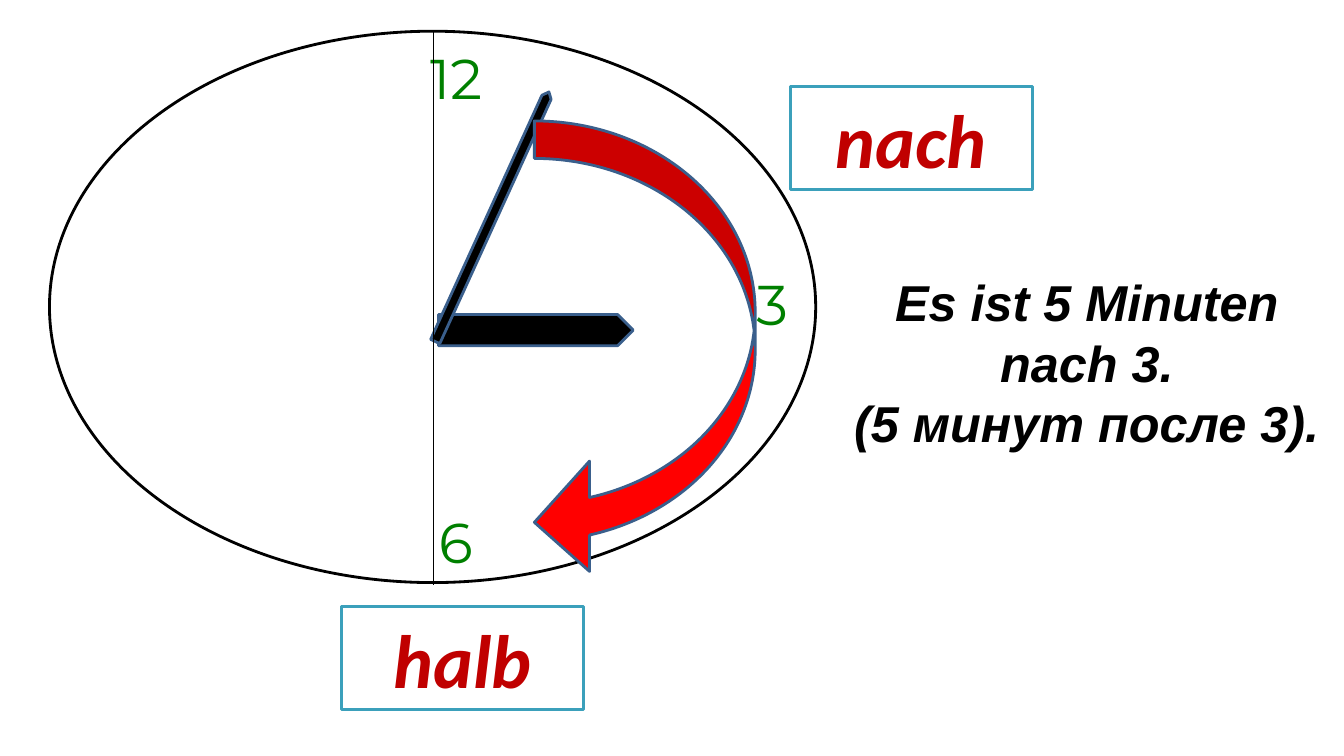
"""Build a German clock-time slide: a dial with hands, numerals and two word tags."""
from lxml.etree import SubElement
from pptx import Presentation
from pptx.dml.color import RGBColor
from pptx.enum.shapes import MSO_CONNECTOR, MSO_SHAPE
from pptx.enum.text import MSO_ANCHOR, MSO_AUTO_SIZE, PP_ALIGN
from pptx.oxml.ns import qn
from pptx.util import Inches, Pt

WIDTH, HEIGHT = Inches(13.33), Inches(7.5)

# Boxes are left, top, width, height in percent of the slide's size.
SENTENCE = ["Es ist 5 Minuten nach 3.", "(5 минут после 3)."]
SENTENCE_BOX = (61.74, 31.2, 38.26, 33.33)
DIAL_BOX = (3.68, 4.13, 57.01, 72.93)
NUMERALS = [
    ("12", (29.63, 5.47, 8.63, 9.33)),
    ("3", (53.56, 35.47, 7.8, 9.33)),
    ("6", (30.38, 66.93, 7.05, 9.33)),
]
HANDS = [
    ((32.63, 41.6, 14.48, 4.13), 0, 0.5),
    ((26.41, 28, 20.41, 1.33), 294.5, 0.58),
]
DIVIDER = (32.26, 4, 32.26, 77.33)
SWEEP_BOX, SWEEP_BENDS = (39.76, 16, 16.43, 60.4), (0.17, 0.5, 0.25)
TAG_SIZE = (18, 13.6)
TAGS = [("nach", (58.81, 11.47)), ("halb", (25.43, 80.27))]

BLACK, EDGE, TEAL = "000000", "3A5F8C", "3BA0BB"
SENTENCE_FONT = {"name": "Arial", "size": Pt(36), "bold": True, "italic": True}
NUMERAL_FONT = {"name": "Montserrat", "size": Pt(40)}
TAG_FONT = {"name": "Calibri", "size": Pt(54), "bold": True, "italic": True}


def colour(value):
    return RGBColor.from_string(value)


def place(shares):
    return [int(share * (WIDTH, HEIGHT)[i % 2] / 100) for i, share in enumerate(shares)]


def write(holder, lines, font, ink):
    frame = holder.text_frame
    frame.text = "\n".join(lines)
    layout = {"word_wrap": True, "auto_size": MSO_AUTO_SIZE.NONE,
              "vertical_anchor": MSO_ANCHOR.MIDDLE}
    for key, value in layout.items():
        setattr(frame, key, value)
    for paragraph in frame.paragraphs:
        paragraph.alignment = PP_ALIGN.CENTER
        for key, value in font.items():
            setattr(paragraph.font, key, value)
        paragraph.font.color.rgb = colour(ink)


def draw(slide, kind, box, edge, fill=None, bends=()):
    shape = slide.shapes.add_shape(kind, *place(box))
    shape.shadow.inherit = False
    shape.line.color.rgb = colour(edge)
    shape.line.width = Pt(2)
    if fill:
        shape.fill.solid()
        shape.fill.fore_color.rgb = colour(fill)
    else:
        shape.fill.background()
    for i, bend in enumerate(bends):
        shape.adjustments[i] = bend
    return shape


def main():
    deck = Presentation()
    deck.slide_width, deck.slide_height = WIDTH, HEIGHT
    slide = deck.slides.add_slide(deck.slide_layouts[5])

    sentence = slide.shapes.title
    for key, value in zip(("left", "top", "width", "height"), place(SENTENCE_BOX)):
        setattr(sentence, key, value)
    write(sentence, SENTENCE, SENTENCE_FONT, BLACK)

    draw(slide, MSO_SHAPE.OVAL, DIAL_BOX, BLACK)
    for numeral, box in NUMERALS:
        write(slide.shapes.add_textbox(*place(box)), [numeral], NUMERAL_FONT, "008000")
    for box, angle, point in HANDS:
        draw(slide, MSO_SHAPE.PENTAGON, box, EDGE, BLACK, [point]).rotation = angle

    divider = slide.shapes.add_connector(MSO_CONNECTOR.STRAIGHT, *place(DIVIDER))
    divider.line.color.rgb = colour(BLACK)
    divider.line.width = Pt(0.75)
    SubElement(divider.element.spPr, qn("a:effectLst"))

    draw(slide, MSO_SHAPE.CURVED_LEFT_ARROW, SWEEP_BOX, EDGE, "FF0000", SWEEP_BENDS)
    for word, corner in TAGS:
        tag = draw(slide, MSO_SHAPE.RECTANGLE, corner + TAG_SIZE, TEAL)
        write(tag, [word], TAG_FONT, "C00000")

    deck.save("out.pptx")


if __name__ == "__main__":
    main()
